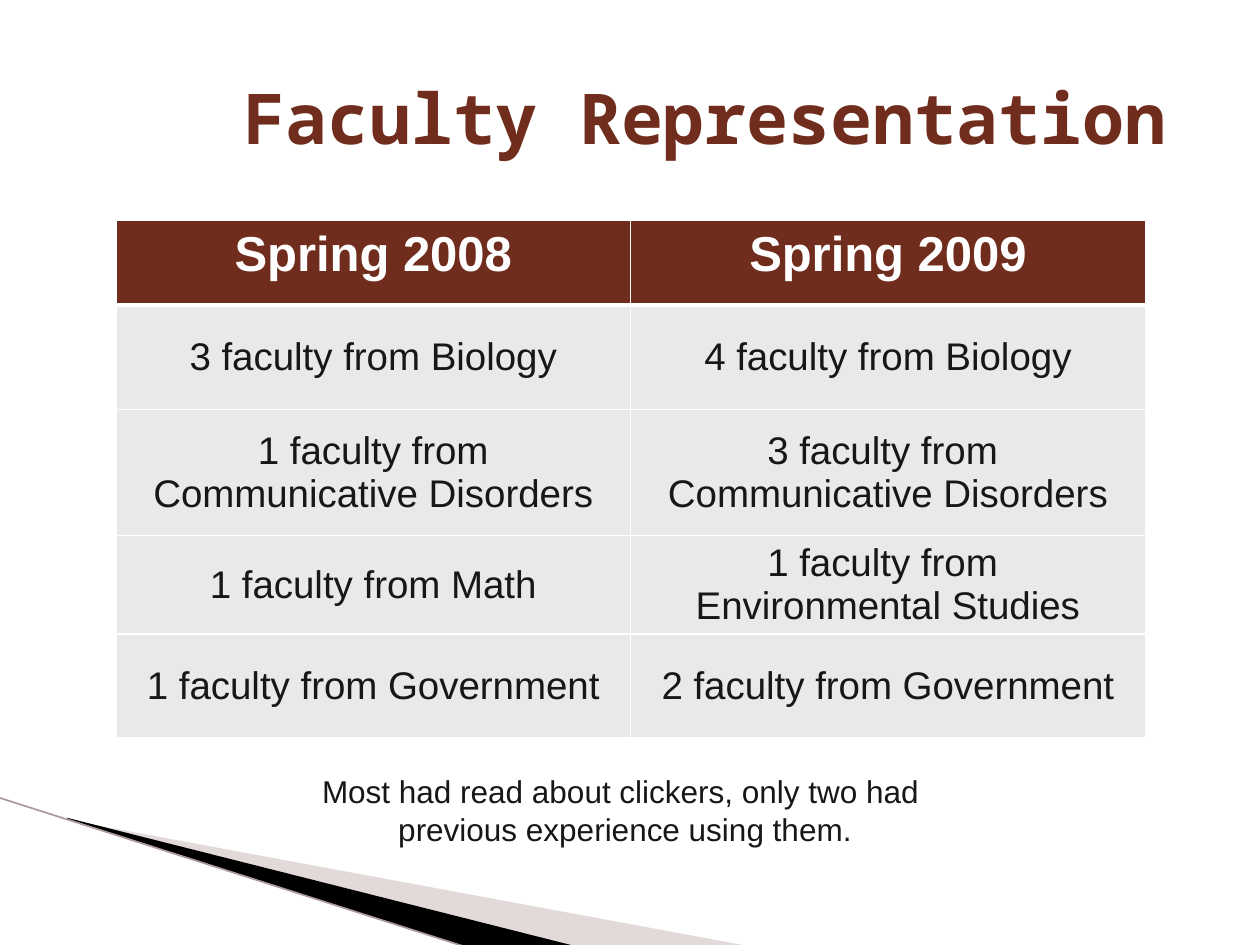
from lxml import etree
from pptx import Presentation
from pptx.dml.color import RGBColor
from pptx.enum.shapes import MSO_CONNECTOR
from pptx.enum.text import MSO_ANCHOR, MSO_AUTO_SIZE, PP_ALIGN
from pptx.oxml.ns import qn
from pptx.util import Inches, Pt

STRAIGHT = MSO_CONNECTOR.STRAIGHT
MIDDLE, TOP = MSO_ANCHOR.MIDDLE, MSO_ANCHOR.TOP
CENTER, LEFT = PP_ALIGN.CENTER, PP_ALIGN.LEFT
GROW = MSO_AUTO_SIZE.SHAPE_TO_FIT_TEXT

RUST = RGBColor(0x70, 0x2C, 0x1C)
INK = RGBColor(0x17, 0x17, 0x17)
BLACK = RGBColor(0, 0, 0)
WHITE = RGBColor(0xFF, 0xFF, 0xFF)
CELL = RGBColor(0xEB, 0xE8, 0xE8)
ROSE = RGBColor(0xB5, 0xA3, 0xA1)
EDGE = RGBColor(0xAD, 0x99, 0x97)

TITLE = {"name": "Noto Sans Mono", "size": Pt(40), "bold": True}
HEADER = {"name": "Arial", "size": Pt(28), "bold": True}
BODY = {"name": "Arial", "size": Pt(22), "bold": False}
NOTE = {"name": "Arial", "size": Pt(18), "bold": False}

ROWS = [
    ("Spring 2008", "Spring 2009"),
    ("3 faculty from Biology", "4 faculty from Biology"),
    ("1 faculty from Communicative Disorders",
     "3 faculty from \vCommunicative Disorders"),
    ("1 faculty from Math", "1 faculty from \vEnvironmental Studies"),
    ("1 faculty from Government", "2 faculty from Government"),
]
ROW_HEIGHTS = (0.67, 0.83, 1, 0.75, 0.82)


def write(tf, text, fmt, color, align):
    """Fill a text frame with one formatted paragraph."""
    p = tf.paragraphs[0]
    p.text = text
    p.alignment = align
    p.space_before = Pt(0)
    for r in p.runs:
        for name, value in fmt.items():
            setattr(r.font, name, value)
        r.font.color.rgb = color


def set_borders(cell, color, widths):
    """Draw the borders of a cell, with widths in points by side."""
    tcPr = cell._tc.get_or_add_tcPr()
    for i, (side, width) in enumerate(widths.items()):
        ln = etree.Element(qn(f"a:ln{side}"), w=str(Pt(width)))
        fill = etree.SubElement(ln, qn("a:solidFill"))
        etree.SubElement(fill, qn("a:srgbClr"), val=str(color))
        tcPr.insert(i, ln)


def add_wedge(s, points, color, alpha=None):
    """Add a filled outline through the points, given in inches."""
    start, *rest = [(Inches(x), Inches(y)) for x, y in points]
    builder = s.shapes.build_freeform(*start, scale=1.0)
    builder.add_line_segments(rest, close=True)
    sp = builder.convert_to_shape()
    sp.shadow.inherit = False
    sp.fill.solid()
    sp.fill.fore_color.rgb = color
    sp.line.fill.background()
    if alpha:
        clr = sp.fill._xPr.find(f"{qn('a:solidFill')}/{qn('a:srgbClr')}")
        etree.SubElement(clr, qn("a:alpha"), val=str(alpha * 1000))


def add_corner(s, left, top):
    """Add the swoosh in the lower left corner from its upper left point."""
    def place(points):
        return [(left + x, top + y) for x, y in points]

    add_wedge(s, place([(0.56, 0.18), (5.96, 1.18), (4.57, 1.18), (0.56, 0.17)]),
              ROSE, 40)
    add_wedge(s, place([(0.54, 0.16), (4.58, 1.18), (3.73, 1.19), (0.55, 0.17)]),
              BLACK)
    line = s.shapes.add_connector(STRAIGHT, Inches(left), Inches(top),
                                  Inches(left + 3.72), Inches(top + 1.19))
    line.line.color.rgb = EDGE
    line.line.width = Pt(0.95)
    etree.SubElement(line._element.spPr, qn("a:effectLst"))


def add_title(s, box):
    """Place and format the title placeholder."""
    sp = s.shapes.title
    sp.left, sp.top, sp.width, sp.height = map(Inches, box)
    sp.text_frame.vertical_anchor = MIDDLE
    write(sp.text_frame, "Faculty Representation", TITLE, RUST, LEFT)


def add_faculty_table(s, box):
    """Add the table of faculty by term."""
    table = s.shapes.add_table(len(ROWS), len(ROWS[0]), *map(Inches, box)).table
    for row, height in zip(table.rows, ROW_HEIGHTS):
        row.height = Inches(height)
    for i, texts in enumerate(ROWS):
        head = i == 0
        for j, text in enumerate(texts):
            cell = table.cell(i, j)
            cell.fill.solid()
            cell.fill.fore_color.rgb = RUST if head else CELL
            cell.vertical_anchor = TOP if head else MIDDLE
            write(cell.text_frame, text, HEADER if head else BODY,
                  WHITE if head else INK, CENTER)
            set_borders(cell, WHITE, {"L": 1, "R": 1, "T": 3 if i == 1 else 1,
                                      "B": 3 if head else 1})


def add_note(s, box):
    """Add the remark below the table."""
    tf = s.shapes.add_textbox(*map(Inches, box)).text_frame
    tf.word_wrap = True
    tf.auto_size = GROW
    write(tf, "Most had read about clickers, only two had \v"
              "previous experience using them.", NOTE, INK, CENTER)


def main():
    """Build the slide and save it."""
    prs = Presentation()
    prs.slide_width, prs.slide_height = Inches(10), Inches(7.5)
    s = prs.slides.add_slide(prs.slide_layouts[5])
    add_corner(s, -0.01, 6.33)
    add_title(s, (1.83, 0.3, 8.17, 1.25))
    add_faculty_table(s, (0.92, 1.75, 8.17, sum(ROW_HEIGHTS)))
    add_note(s, (1.5, 6.08, 6.92, 0.7))
    prs.save("out.pptx")


if __name__ == "__main__":
    main()
